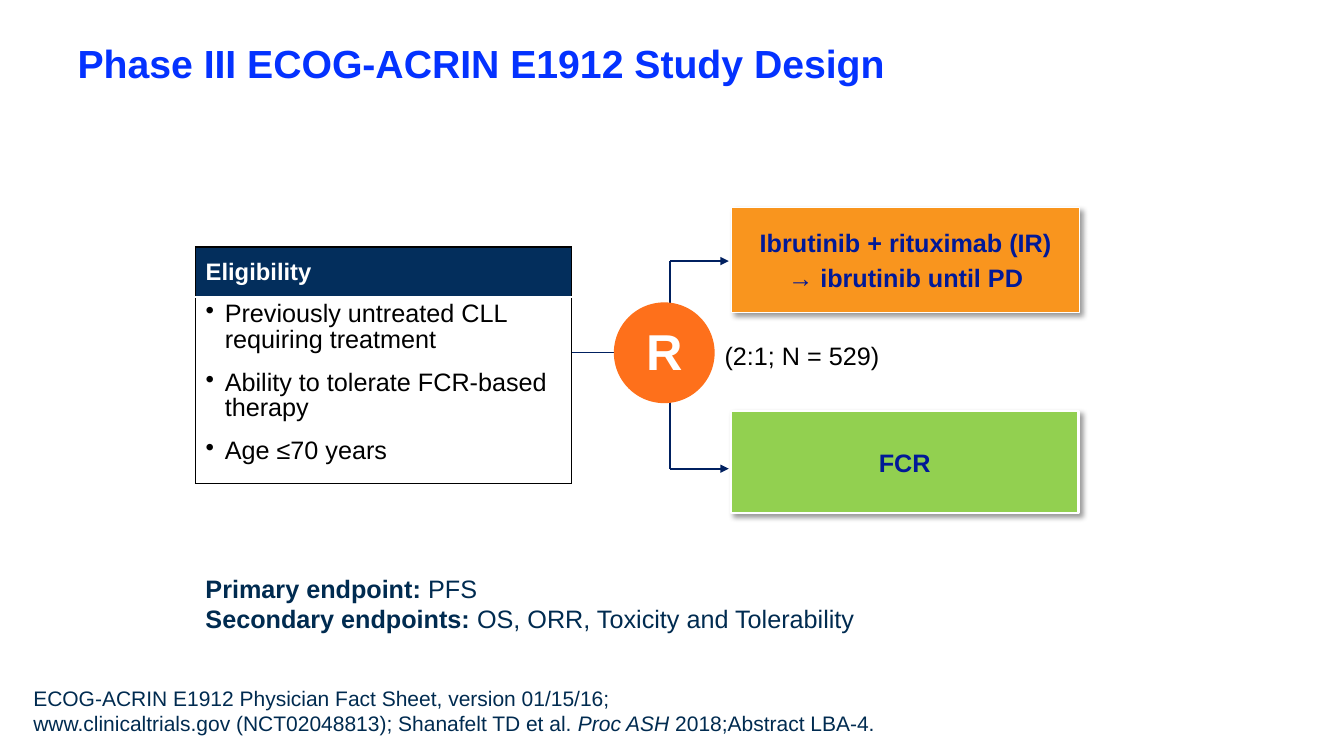
from dataclasses import dataclass, field
from typing import Any

from lxml.etree import SubElement
from pptx import Presentation
from pptx.dml.color import RGBColor
from pptx.enum.shapes import MSO_CONNECTOR, MSO_SHAPE
from pptx.enum.text import MSO_ANCHOR, MSO_AUTO_SIZE, PP_ALIGN
from pptx.oxml.ns import qn
from pptx.util import Pt

TITLE_BLUE = RGBColor(0x04, 0x32, 0xFF)
ARM_TEXT = RGBColor(0x01, 0x19, 0x97)
NAVY = RGBColor(0x00, 0x2B, 0x50)
HEADER_NAVY = RGBColor(0x03, 0x2E, 0x5C)
LINE_NAVY = RGBColor(0x00, 0x20, 0x60)
ORANGE = RGBColor(0xF9, 0x95, 0x1E)
RANDOM_ORANGE = RGBColor(0xFE, 0x70, 0x1B)
GREEN = RGBColor(0x92, 0xD0, 0x50)
BLACK = RGBColor(0x00, 0x00, 0x00)
WHITE = RGBColor(0xFF, 0xFF, 0xFF)


@dataclass(frozen=True)
class Span:
    text: str
    bold: bool = False
    italic: bool = False


@dataclass(frozen=True)
class Arm:
    lines: list[str]
    left: float
    top: float
    height: float
    fill: RGBColor
    border: float
    space_after: float


@dataclass(frozen=True)
class Label:
    left: float
    top: float
    width: float
    height: float
    paragraphs: list[list[Span]]
    size: float
    color: RGBColor
    frame: dict[str, Any] = field(default_factory=dict)


@dataclass(frozen=True)
class Link:
    start: tuple[float, float]
    end: tuple[float, float]
    weight: float = 1.5
    arrow: bool = False


def apply_format(target: Any, values: dict[str, Any]) -> None:
    for name, value in values.items():
        setattr(target, name, value)


def write_text(frame, paragraphs: list[list[Span]], size: float,
               color: RGBColor, layout: dict[str, Any]) -> None:
    for index, spans in enumerate(paragraphs):
        para = frame.add_paragraph() if index else frame.paragraphs[0]
        apply_format(para, layout)
        for span in spans:
            run = para.add_run()
            run.text = span.text
            apply_format(run.font, {"name": "Arial", "size": Pt(size),
                                    "bold": span.bold, "italic": span.italic})
            run.font.color.rgb = color


def add_shadow(box) -> None:
    effects = box._element.spPr.find(qn("a:effectLst"))
    shadow = SubElement(effects, qn("a:outerShdw"), blurRad=str(Pt(4)),
                        dist=str(Pt(3)), dir="2700000", algn="tl", rotWithShape="0")
    color = SubElement(shadow, qn("a:srgbClr"), val=str(BLACK))
    SubElement(color, qn("a:alpha"), val="40000")


def add_arm(page, arm: Arm) -> None:
    box = page.shapes.add_shape(MSO_SHAPE.RECTANGLE, Pt(arm.left), Pt(arm.top),
                                Pt(248.4), Pt(arm.height))
    box.shadow.inherit = False
    add_shadow(box)
    box.fill.solid()
    box.fill.fore_color.rgb = arm.fill
    box.line.color.rgb = WHITE
    box.line.width = Pt(arm.border)
    box.text_frame.vertical_anchor = MSO_ANCHOR.MIDDLE
    write_text(box.text_frame, [[Span(line, bold=True)] for line in arm.lines], 18, ARM_TEXT,
               {"alignment": PP_ALIGN.CENTER, "space_after": Pt(arm.space_after)})


def add_label(page, label: Label) -> None:
    box = page.shapes.add_textbox(Pt(label.left), Pt(label.top),
                                  Pt(label.width), Pt(label.height))
    apply_format(box.text_frame, {"word_wrap": True,
                                  "auto_size": MSO_AUTO_SIZE.SHAPE_TO_FIT_TEXT, **label.frame})
    write_text(box.text_frame, label.paragraphs, label.size, label.color, {})


def add_link(page, link: Link) -> None:
    connector = page.shapes.add_connector(MSO_CONNECTOR.STRAIGHT,
                                          *map(Pt, link.start + link.end))
    connector.line.color.rgb = LINE_NAVY
    connector.line.width = Pt(link.weight)
    if link.arrow:
        SubElement(connector.line._get_or_add_ln(), qn("a:tailEnd"), type="triangle")
    SubElement(connector._element.spPr, qn("a:effectLst"))


def add_randomization(page) -> None:
    circle = page.shapes.add_shape(MSO_SHAPE.OVAL, Pt(438.5), Pt(216), Pt(72), Pt(72))
    circle.shadow.inherit = False
    circle.fill.solid()
    circle.fill.fore_color.rgb = RANDOM_ORANGE
    circle.line.fill.background()
    apply_format(circle.text_frame, {"margin_left": 0, "margin_right": 0, "margin_top": 0,
                                     "margin_bottom": Pt(3.6),
                                     "vertical_anchor": MSO_ANCHOR.MIDDLE})
    write_text(circle.text_frame, [[Span("R", bold=True)]], 36, WHITE,
               {"alignment": PP_ALIGN.CENTER})


def style_cell(cell, fill: RGBColor, borders: dict[str, tuple[RGBColor, float]]) -> None:
    properties = cell._tc.get_or_add_tcPr()
    for side, (color, weight) in borders.items():
        edge = SubElement(properties, qn(f"a:ln{side}"), w=str(Pt(weight)))
        SubElement(SubElement(edge, qn("a:solidFill")), qn("a:srgbClr"), val=str(color))
    cell.fill.solid()
    cell.fill.fore_color.rgb = fill


def add_eligibility(page, criteria: list[str]) -> None:
    table = page.shapes.add_table(2, 1, Pt(139.7), Pt(176.4), Pt(268.6), Pt(169.2)).table
    apply_format(table, {"first_row": False, "horz_banding": False})
    for row, height in zip(table.rows, (36, 133.2)):
        row.height = Pt(height)
    header, body = table.cell(0, 0), table.cell(1, 0)
    outer, divider = (BLACK, 1), (WHITE, 1.5)
    style_cell(header, HEADER_NAVY, {"L": outer, "R": outer, "T": outer, "B": divider})
    style_cell(body, WHITE, {"L": outer, "R": outer, "T": divider, "B": outer})
    header.vertical_anchor = MSO_ANCHOR.MIDDLE
    write_text(header.text_frame, [[Span("Eligibility", bold=True)]], 17, WHITE,
               {"line_spacing": Pt(19.6)})
    write_text(body.text_frame, [[Span(item)] for item in criteria], 18, BLACK,
               {"line_spacing": Pt(18.4)})
    for index, para in enumerate(body.text_frame.paragraphs):
        properties = para._p.get_or_add_pPr()
        properties.set("marL", str(Pt(13.7)))
        properties.set("indent", str(-Pt(13.7)))
        SubElement(properties, qn("a:buChar"), char="•")
        if index:
            para.space_before = Pt(12)


def add_title(page, text: str) -> None:
    title = page.shapes.title
    apply_format(title, {"left": Pt(48.2), "top": Pt(0), "width": Pt(905.8), "height": Pt(90)})
    apply_format(title.text_frame, {"vertical_anchor": MSO_ANCHOR.MIDDLE, "word_wrap": True,
                                    "auto_size": MSO_AUTO_SIZE.NONE})
    write_text(title.text_frame, [[Span(text, bold=True)]], 28, TITLE_BLUE,
               {"alignment": PP_ALIGN.LEFT})


ARMS = [
    Arm(["FCR"], 522, 293.8, 72.7, GREEN, 1.5, 2.2),
    Arm(["Ibrutinib + rituximab (IR)", "→ ibrutinib until PD"], 522.7, 148.3, 74.9, ORANGE, 1, 3),
]
LABELS = [
    Label(23.8, 488.9, 633.6, 37.4, [
        [Span("ECOG-ACRIN E1912 Physician Fact Sheet, version 01/15/16;")],
        [Span("www.clinicaltrials.gov (NCT02048813); Shanafelt TD et al. "),
         Span("Proc ASH ", italic=True), Span("2018;Abstract LBA-4.")],
    ], 15, NAVY, {"margin_left": 0, "margin_top": Pt(0.7), "margin_right": 0, "margin_bottom": 0}),
    Label(139.7, 406.1, 548.6, 51.1, [
        [Span("Primary endpoint: ", bold=True), Span("PFS")],
        [Span("Secondary endpoints: ", bold=True), Span("OS, ORR, Toxicity and Tolerability")],
    ], 18, NAVY),
    Label(510.5, 239.8, 126, 28.8, [[Span("(2:1; N = 529)")]], 18, BLACK, {"word_wrap": False}),
]
TRUNK, ARROW_END, UPPER, LOWER = 478.8, 520.6, 186.5, 334.8
LINKS = [
    Link((TRUNK, 283.7), (TRUNK, LOWER)),
    Link((TRUNK, LOWER), (ARROW_END, LOWER), arrow=True),
    Link((TRUNK, UPPER), (TRUNK, 218.9)),
    Link((TRUNK, UPPER), (ARROW_END, UPPER), arrow=True),
    Link((397.4, 252), (438.5, 252), weight=0.75),
]
CRITERIA = ["Previously untreated CLL requiring treatment",
            "Ability to tolerate FCR-based therapy", "Age ≤70 years"]


def main() -> None:
    deck = Presentation()
    apply_format(deck, {"slide_width": Pt(960), "slide_height": Pt(540)})
    page = deck.slides.add_slide(deck.slide_layouts[5])
    add_title(page, "Phase III ECOG-ACRIN E1912 Study Design")
    for arm in ARMS:
        add_arm(page, arm)
    for label in LABELS:
        add_label(page, label)
    for link in LINKS:
        add_link(page, link)
    add_randomization(page)
    add_eligibility(page, CRITERIA)
    deck.save("out.pptx")


if __name__ == "__main__":
    main()
